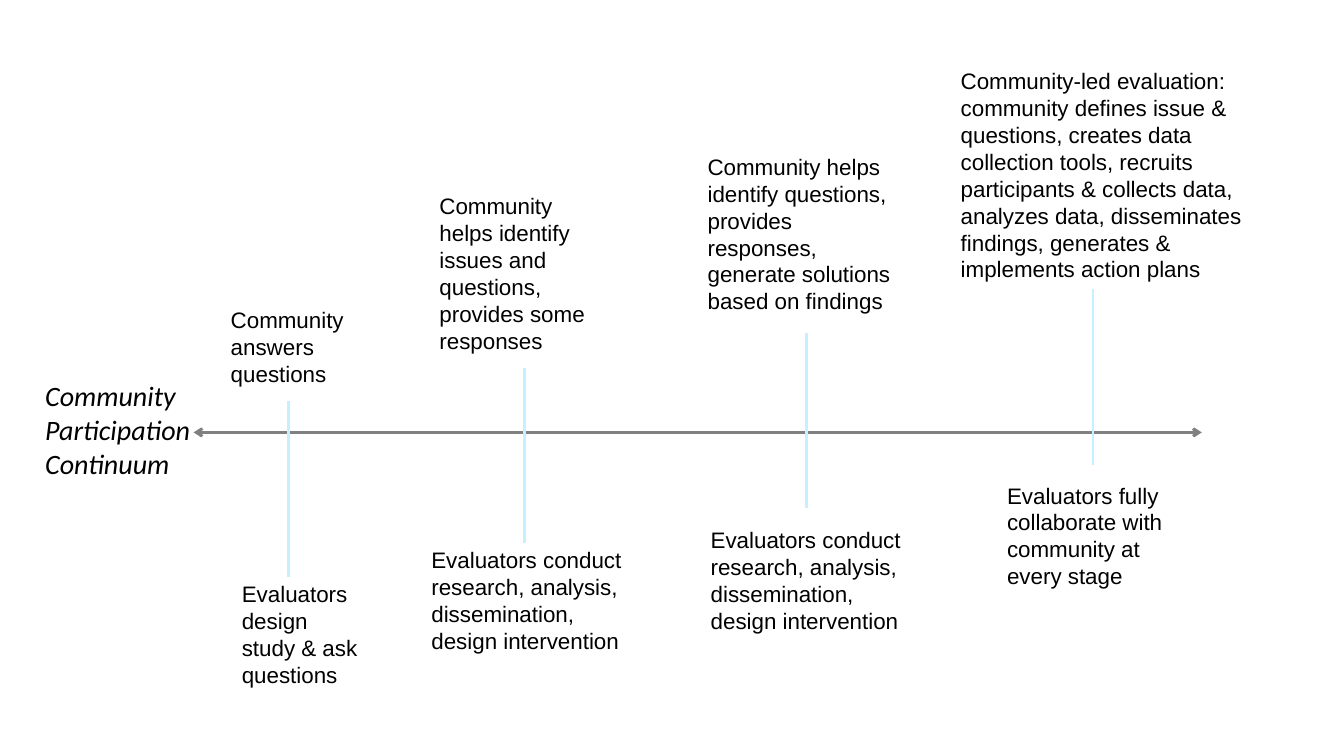
from dataclasses import dataclass

from pptx import Presentation
from pptx import util as u
from pptx.dml.color import RGBColor
from pptx.enum import shapes, text
from pptx.oxml import ns, xmlchemy


@dataclass(frozen=True)
class Theme:
    ink: str = "000000"
    axis: str = "808080"
    marker: str = "C6EFFF"
    body_font: str = "Arial"
    label_font: str = "Calibri"
    body_size: int = 16
    label_size: int = 20
    line_width: int = 2


theme = Theme()

deck = Presentation()
deck.slide_width, deck.slide_height = u.Inches(13.33), u.Inches(7.5)
slide = deck.slides.add_slide(deck.slide_layouts[6])


def add_text(content, box, *, font=theme.body_font, size=theme.body_size,
             italic=False, wrap=True):
    note = slide.shapes.add_textbox(*[u.Inches(value) for value in box])
    frame = note.text_frame
    frame.word_wrap = wrap
    frame.auto_size = text.MSO_AUTO_SIZE.SHAPE_TO_FIT_TEXT
    frame.text = content
    for paragraph in frame.paragraphs:
        style = paragraph.runs[0].font
        style.name, style.size, style.italic = font, u.Pt(size), italic
        style.color.rgb = RGBColor.from_string(theme.ink)


def add_line(x1, y1, x2, y2, color, arrows=False):
    line = slide.shapes.add_connector(
        shapes.MSO_CONNECTOR.STRAIGHT, *[u.Inches(value) for value in (x1, y1, x2, y2)])
    line.line.width = u.Pt(theme.line_width)
    line.line.color.rgb = RGBColor.from_string(color)
    if arrows:
        for end in ("a:headEnd", "a:tailEnd"):
            arrowhead = xmlchemy.OxmlElement(end)
            arrowhead.set("type", "arrow")
            line.line._get_or_add_ln().append(arrowhead)
    properties = line._element.find(ns.qn("p:spPr"))
    properties.append(xmlchemy.OxmlElement("a:effectLst"))


# Continuum axis
add_line(1.92, 4.29, 11.92, 4.29, theme.axis, arrows=True)

# Stages: marker x and top, community role and box, evaluator role and box
researchers = "Evaluators conduct research, analysis, dissemination, design intervention"
stages = [
    (2.86, 3.98,
     "Community answers questions", (2.19, 2.99, 1.38, 0.91),
     "Evaluators design study & ask questions", (2.3, 5.71, 1.38, 1.18)),
    (5.2, 3.65,
     "Community helps identify issues and questions, provides some responses",
     (4.26, 1.86, 1.88, 1.72),
     researchers, (4.18, 5.37, 2.09, 1.18)),
    (8, 3.3,
     "Community helps identify questions, provides responses, "
     "generate solutions based on findings", (6.92, 1.47, 2.16, 1.72),
     researchers, (6.95, 5.17, 2.09, 1.18)),
    (10.84, 2.87,
     "Community-led evaluation: community defines issue & questions, creates data "
     "collection tools, recruits participants & collects data, analyzes data, "
     "disseminates findings, generates & implements action plans",
     (9.43, 0.62, 3.02, 2.26),
     "Evaluators fully collaborate with community at every stage",
     (9.89, 4.73, 1.86, 1.18)),
]
marker_length = 1.74
for x, top, community, community_box, evaluators, evaluators_box in stages:
    add_line(x, top, x, top + marker_length, theme.marker)
    add_text(community, community_box)
    add_text(evaluators, evaluators_box)

# Axis label
add_text("Community\nParticipation\nContinuum", (0.35, 3.71, 1.64, 1.11),
         font=theme.label_font, size=theme.label_size, italic=True, wrap=False)

deck.save("out.pptx")
